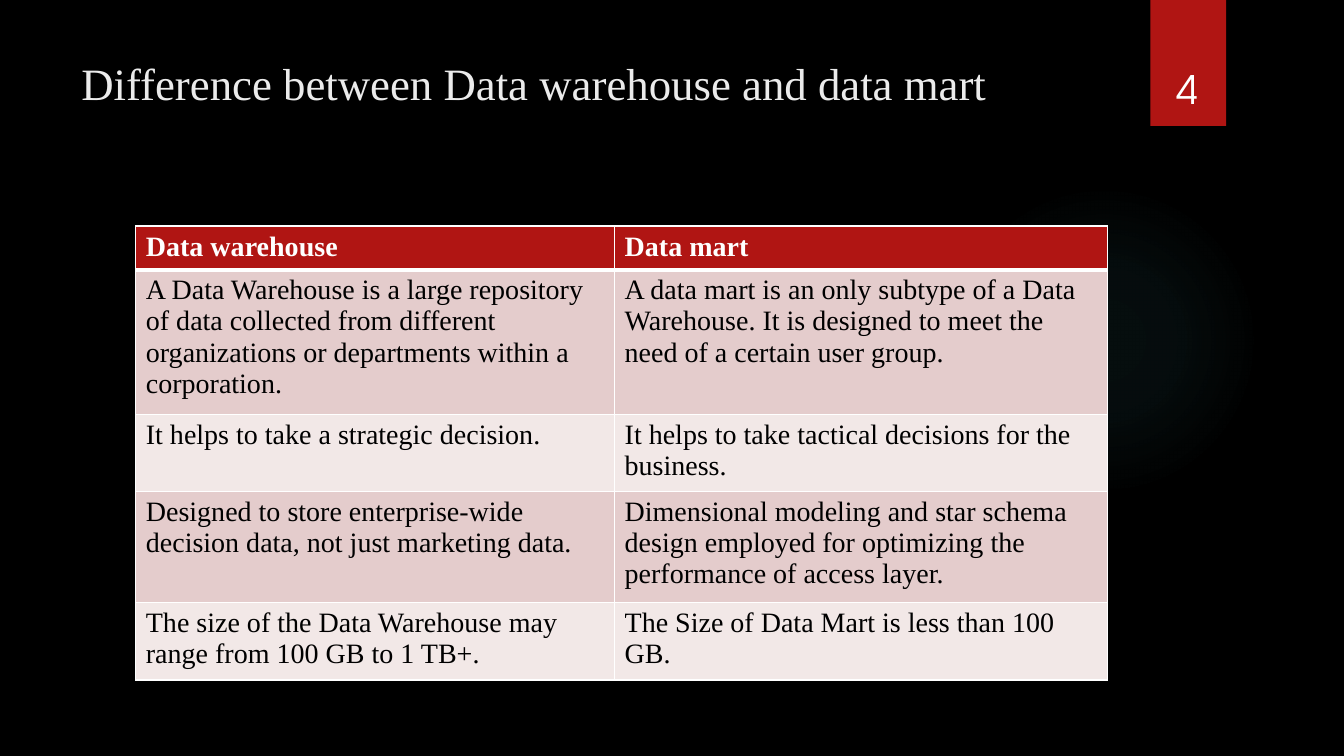
from lxml.etree import SubElement
from pptx import Presentation
from pptx.dml.color import RGBColor
from pptx.enum.shapes import MSO_SHAPE
from pptx.enum.text import MSO_ANCHOR, PP_ALIGN
from pptx.oxml import parse_xml
from pptx.oxml.ns import nsdecls, qn
from pptx.util import Pt

TITLE = "Difference between Data warehouse and data mart"
PAGE_NUMBER = "4"
ROWS = [
    ("Data warehouse", "Data mart", 1),
    ("A Data Warehouse is a large repository of data collected from different "
     "organizations or departments within a corporation.",
     "A data mart is an only subtype of a Data Warehouse. It is designed to meet "
     "the need of a certain user group.", 4),
    ("It helps to take a strategic decision.",
     "It helps to take tactical decisions for the business.", 2),
    ("Designed to store enterprise-wide decision data, not just marketing data.",
     "Dimensional modeling and star schema design employed for optimizing the "
     "performance of access layer.", 3),
    ("The size of the Data Warehouse may range from 100 GB to 1 TB+.",
     "The Size of Data Mart is less than 100 GB.", 2),
]

RED, WHITE, BLACK, GLOW = "B01513", "FFFFFF", "000000", "50B9C1"
BANDS = ("F2E8E7", "E4CCCC")
SERIF, SANS = "Times New Roman", "TeX Gyre Adventor"
GLOW_STOPS = [(0, 7), (36, 6), (69, 0), (100, 0)]
COLUMN_WIDTHS = (342, 352)
LINE_HEIGHT, CELL_PADDING = 22.2, 7.2

TITLE_FORMAT = {"size": Pt(32), "name": SERIF, "color": "EBEBEB"}
NUMBER_FORMAT = {"size": Pt(28), "name": SANS, "color": WHITE}
HEAD_FORMAT = {"size": Pt(20), "name": SERIF, "color": WHITE, "bold": True}
BODY_FORMAT = {"size": Pt(20), "name": SERIF, "color": BLACK, "bold": False}


def paint(fill, color):
    fill.solid()
    fill.fore_color.rgb = RGBColor.from_string(color)


def write(frame, text, values):
    frame.word_wrap = True
    para = frame.paragraphs[0]
    span = para.add_run()
    span.text = text
    for name, value in values.items():
        if name == "color":
            paint(span.font.fill, value)
        else:
            setattr(span.font, name, value)
    return para


def add_text(page, area, text, values):
    box = page.shapes.add_textbox(*map(Pt, area))
    return box.text_frame, write(box.text_frame, text, values)


def add_plain_shape(page, kind, area, color):
    shape = page.shapes.add_shape(kind, *map(Pt, area))
    shape.shadow.inherit = False
    paint(shape.fill, color)
    shape.line.fill.background()
    return shape


def add_glow(page):
    glow = add_plain_shape(page, MSO_SHAPE.OVAL, (677.5, 131.8, 221.8, 221.8), GLOW)
    stops = "".join(
        f'<a:gs pos="{place * 1000}"><a:srgbClr val="{GLOW}">'
        f'<a:alpha val="{opacity * 1000}"/></a:srgbClr></a:gs>'
        for place, opacity in GLOW_STOPS
    )
    gradient = parse_xml(
        f'<a:gradFill {nsdecls("a")} rotWithShape="1"><a:gsLst>{stops}</a:gsLst>'
        '<a:path path="circle"><a:fillToRect l="50000" t="50000" r="50000" b="50000"/>'
        '</a:path></a:gradFill>'
    )
    properties = glow.fill._xPr
    properties.replace(properties.find(qn("a:solidFill")), gradient)


def add_borders(cell, widths):
    properties = cell._tc.get_or_add_tcPr()
    for side, width in widths.items():
        line = SubElement(properties, qn(f"a:ln{side}"), w=str(int(Pt(width))))
        fill = SubElement(line, qn("a:solidFill"))
        SubElement(fill, qn("a:srgbClr"), val=WHITE)


def add_comparison(page):
    heights = [lines * LINE_HEIGHT + CELL_PADDING for *_, lines in ROWS]
    area = (97, 161.5, sum(COLUMN_WIDTHS), sum(heights))
    table = page.shapes.add_table(
        len(ROWS), len(COLUMN_WIDTHS), *map(Pt, area)).table
    for column, width in zip(table.columns, COLUMN_WIDTHS):
        column.width = Pt(width)
    for index, (*texts, _) in enumerate(ROWS):
        table.rows[index].height = Pt(heights[index])
        is_head = index == 0
        for column, text in enumerate(texts):
            cell = table.cell(index, column)
            write(cell.text_frame, text, HEAD_FORMAT if is_head else BODY_FORMAT)
            add_borders(cell, {"L": 1, "R": 1, "T": 3 if index == 1 else 1,
                               "B": 3 if is_head else 1})
            paint(cell.fill, RED if is_head else BANDS[index % 2])


def main():
    deck = Presentation()
    deck.slide_width, deck.slide_height = Pt(960), Pt(540)
    page = deck.slides.add_slide(deck.slide_layouts[6])
    paint(page.background.fill, BLACK)
    add_glow(page)
    add_plain_shape(page, MSO_SHAPE.RECTANGLE, (821.8, 0, 54, 90), RED)
    add_text(page, (51, 36, 741, 110), TITLE, TITLE_FORMAT)
    add_comparison(page)
    frame, para = add_text(page, (815, 23, 66, 60.5), PAGE_NUMBER, NUMBER_FORMAT)
    frame.vertical_anchor = MSO_ANCHOR.BOTTOM
    para.alignment = PP_ALIGN.CENTER
    deck.save("out.pptx")


if __name__ == "__main__":
    main()
